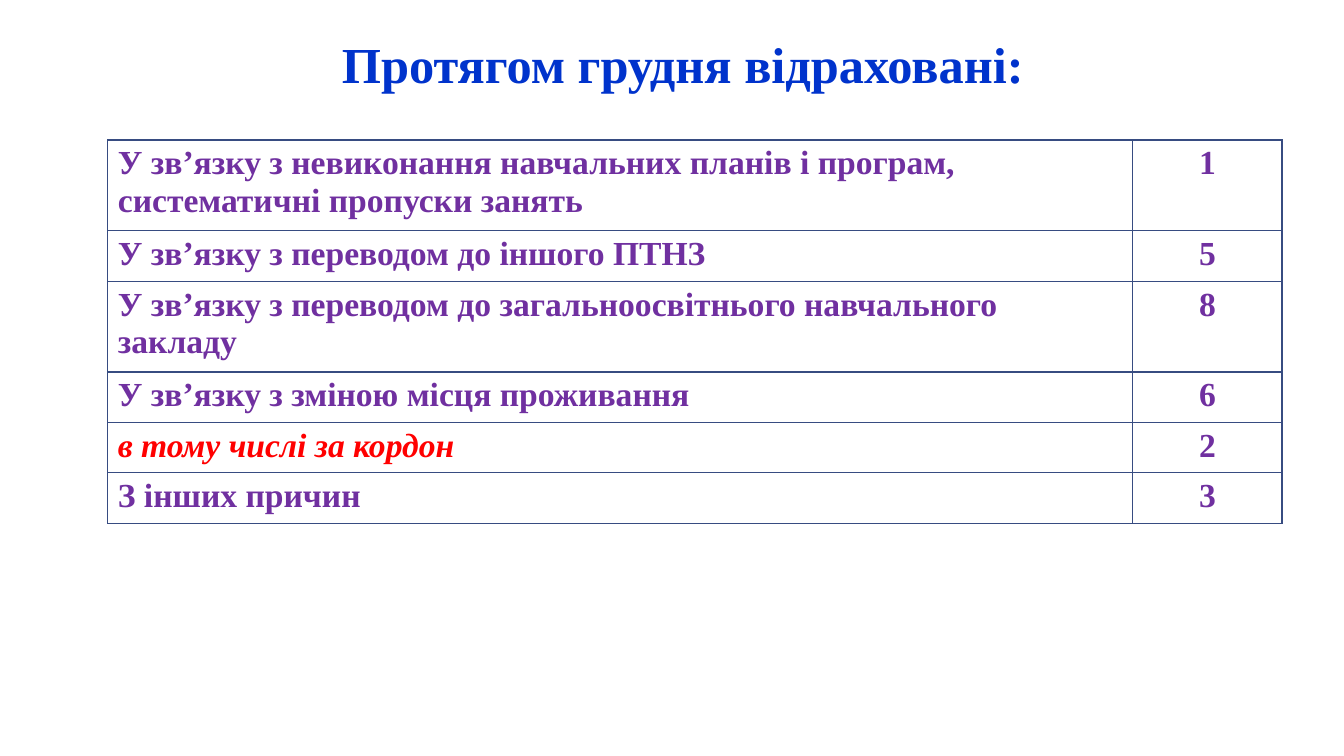
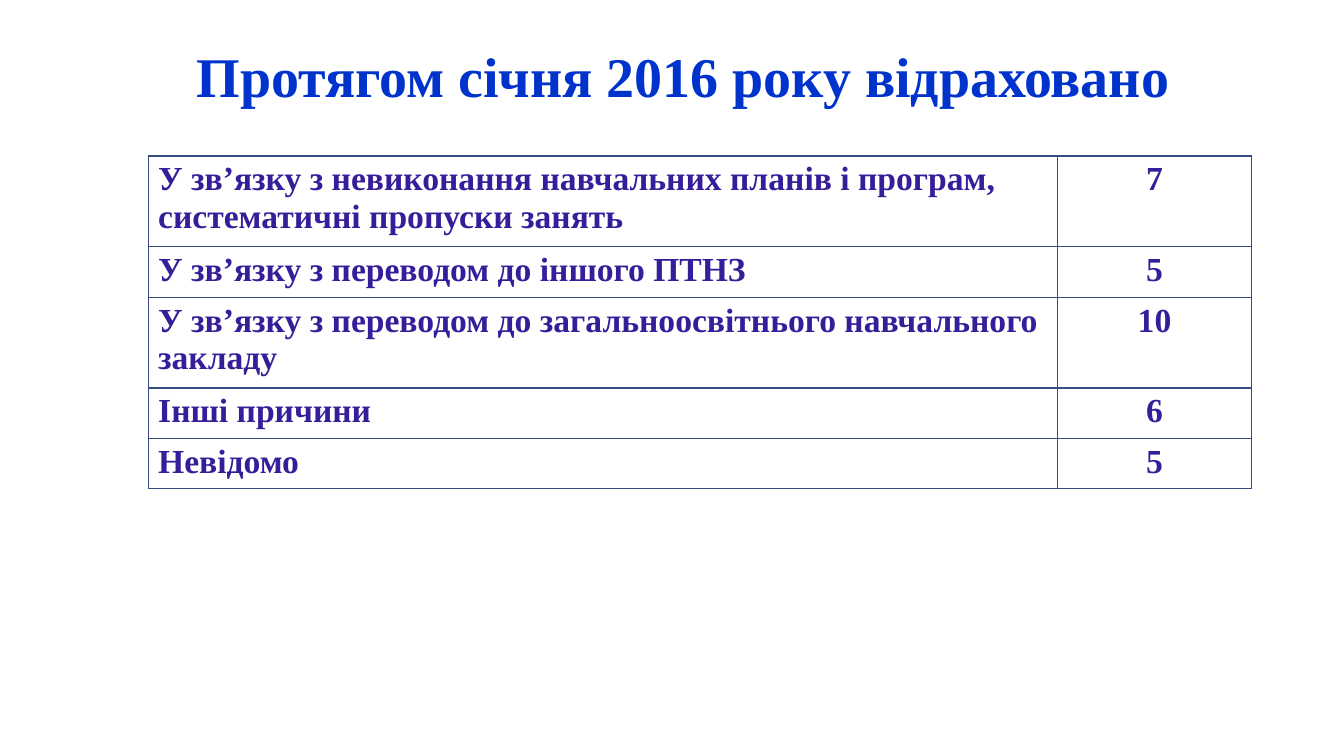
from lxml.etree import SubElement
from pptx import Presentation
from pptx.dml.color import RGBColor
from pptx.enum.text import MSO_ANCHOR as Anchor, PP_ALIGN as Align
from pptx.oxml.ns import qn
from pptx.util import Pt

COLORS = {"title": "0033CC", "border": "374C81", "purple": "7030A0", "indigo": "361E9A", "red": "FF0000"}
FONT = "Times New Roman"
ROW_HEIGHT = 33.6
LINE_HEIGHT = 26.6

PROGRAM = "У зв’язку з невиконання навчальних планів і програм, систематичні пропуски занять"
OTHER_COLLEGE = "У зв’язку з переводом до іншого ПТНЗ"
SCHOOL = "У зв’язку з переводом до загальноосвітнього навчального закладу"
ABROAD = "в тому числі за кордон"
TWO_LINE_REASONS = (PROGRAM, SCHOOL)

PAGES = [
    {
        "title": "Протягом грудня відраховані:",
        "title_size": 36, "title_top": 20.9, "title_height": 51.1,
        "left": 77, "top": 100, "columns": (732.2, 106.6), "color": "purple",
        "rows": [(PROGRAM, 1), (OTHER_COLLEGE, 5), (SCHOOL, 8),
                 ("У зв’язку з зміною місця проживання", 6), (ABROAD, 2), ("З інших причин", 3)],
    },
    {
        "title": "Протягом січня 2016 року відраховано",
        "title_size": 40, "title_top": 5.8, "title_height": 77,
        "left": 105.8, "top": 111.4, "columns": (649.4, 139), "color": "indigo",
        "rows": [(PROGRAM, 7), (OTHER_COLLEGE, 5), (SCHOOL, 10), ("Інші причини", 6), ("Невідомо", 5)],
    },
]


def add_text(para, text, size, color, align, italic=False):
    para.alignment = align
    span = para.add_run()
    span.text = text
    span.font.name = FONT
    span.font.size = Pt(size)
    span.font.bold = True
    span.font.italic = italic
    span.font.color.rgb = RGBColor.from_string(COLORS[color])


def add_borders(cell):
    properties = cell._tc.get_or_add_tcPr()
    for side in ("lnL", "lnR", "lnT", "lnB"):
        line = SubElement(properties, qn(f"a:{side}"), w=str(Pt(1)))
        fill = SubElement(line, qn("a:solidFill"))
        SubElement(fill, qn("a:srgbClr"), val=COLORS["border"])


deck = Presentation()
deck.slide_width = Pt(960)
deck.slide_height = Pt(540)

for content in PAGES:
    page = deck.slides.add_slide(deck.slide_layouts[6])

    box = page.shapes.add_textbox(Pt(87.8), Pt(content["title_top"]), Pt(800), Pt(content["title_height"]))
    frame = box.text_frame
    frame.word_wrap = True
    frame.vertical_anchor = Anchor.BOTTOM
    frame.margin_left = frame.margin_right = Pt(9.4)
    frame.margin_top = frame.margin_bottom = Pt(5)
    para = frame.paragraphs[0]
    para.line_spacing = 0.85
    add_text(para, content["title"], content["title_size"], "title", Align.CENTER)

    rows = content["rows"]
    heights = [ROW_HEIGHT + LINE_HEIGHT * (reason in TWO_LINE_REASONS) for reason, _ in rows]
    table = page.shapes.add_table(
        len(rows), 2, Pt(content["left"]), Pt(content["top"]),
        Pt(sum(content["columns"])), Pt(sum(heights))).table
    table.first_row = False
    table.horz_banding = False
    for column, width in zip(table.columns, content["columns"]):
        column.width = Pt(width)

    for row, height, (reason, count) in zip(table.rows, heights, rows):
        row.height = Pt(height)
        abroad = reason == ABROAD
        reason_cell, count_cell = row.cells
        for cell in (reason_cell, count_cell):
            add_borders(cell)
            cell.fill.background()
        add_text(reason_cell.text_frame.paragraphs[0], reason, 24,
                 "red" if abroad else content["color"], Align.LEFT, abroad)
        add_text(count_cell.text_frame.paragraphs[0], str(count), 24, content["color"], Align.CENTER)

deck.save("out.pptx")
